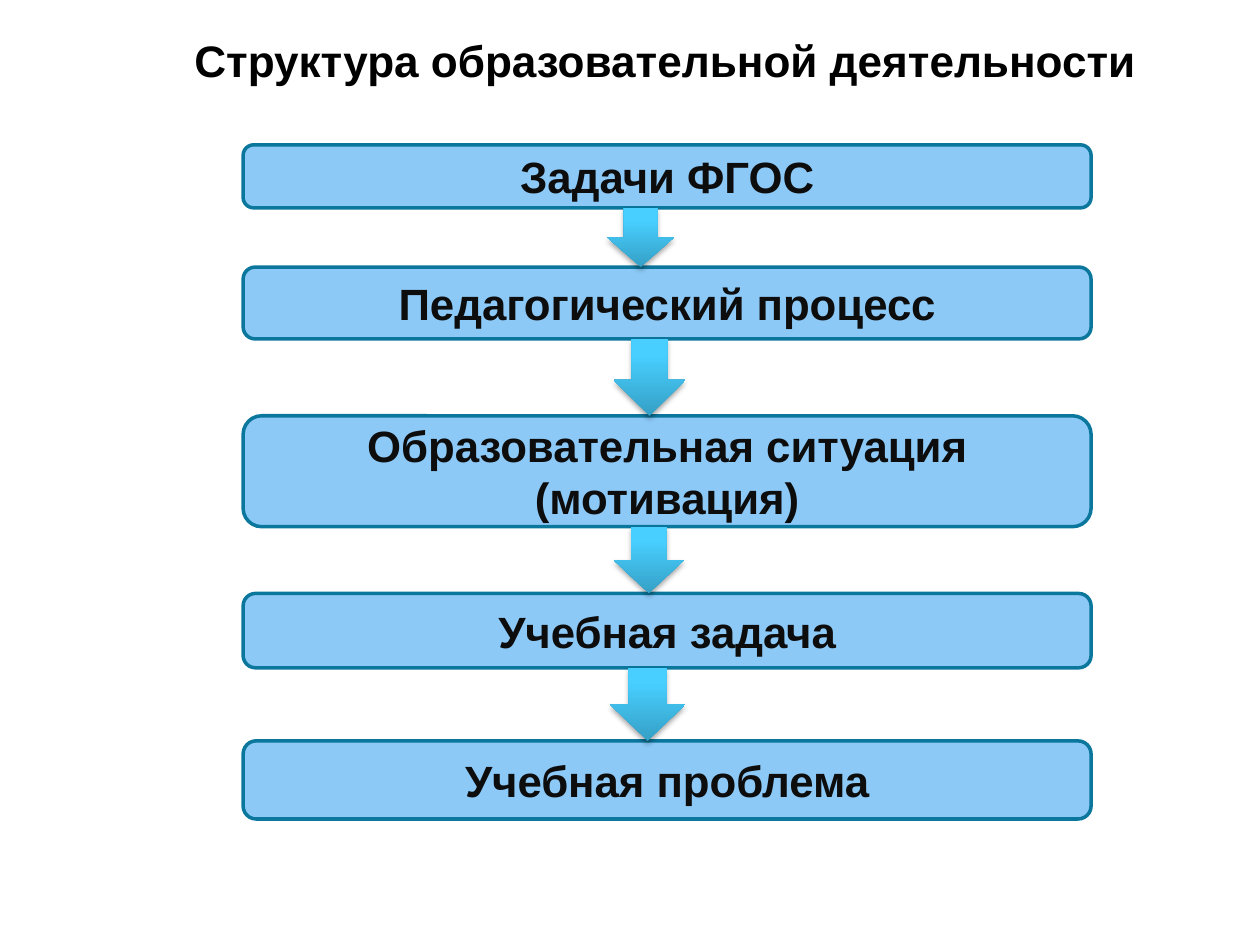
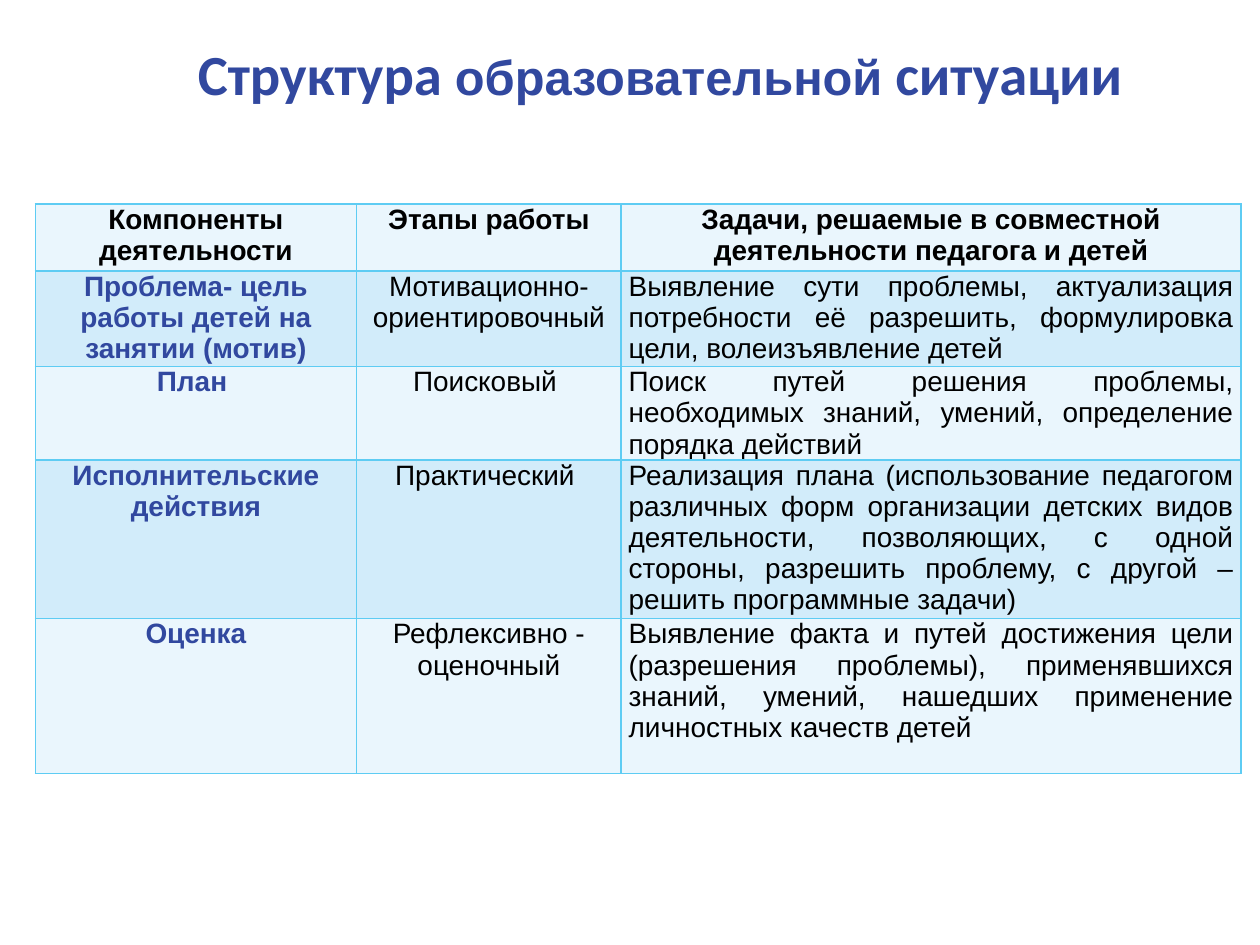
from itertools import pairwise

from lxml import etree
from pptx import Presentation
from pptx import util as u
from pptx.dml.color import RGBColor
from pptx.enum import shapes, text
from pptx.oxml import parse_xml
from pptx.oxml.ns import nsdecls, qn

COLUMNS, ROWS = 100, 75
CELL = u.Inches(0.1)
BLACK, INK, NAVY = "000000", "0D0D0D", "31489F"
STEP_FILL, STEP_LINE = "8CC9F7", "0C779D"
ARROW_DARK, ARROW_LIGHT = "35A0C6", "48CFFF"
BORDER, BANDS = "5ECCF3", ("EAF6FD", "D2ECFA")
CENTER, JUSTIFY = text.PP_ALIGN.CENTER, text.PP_ALIGN.JUSTIFY

STEPS = [
    ("Задачи ФГОС", 0, 5),
    ("Педагогический процесс", 9.7, 5.7),
    ("Образовательная ситуация (мотивация)", 21.5, 8.8),
    ("Учебная задача", 35.6, 5.9),
    ("Учебная проблема", 47.3, 6.2),
]
ARROWS = [(28.9, 5.3), (29.4, 5.7), (29.4, 5.6), (29.1, 6)]

STAGES = [
    ("Компоненты деятельности", "Этапы работы",
     "Задачи, решаемые в совместной деятельности педагога и детей"),
    ("Проблема- цель работы детей на занятии (мотив)", "Мотивационно-ориентировочный",
     "Выявление сути проблемы, актуализация потребности её разрешить, "
     "формулировка цели, волеизъявление детей"),
    ("План ", "Поисковый ",
     "Поиск путей решения проблемы, необходимых знаний, умений, "
     "определение порядка действий"),
    ("Исполнительские действия", "Практический ",
     "Реализация плана (использование педагогом различных форм организации "
     "детских видов деятельности, позволяющих, с одной стороны, разрешить "
     "проблему, с другой – решить программные задачи)"),
    ("Оценка", "Рефлексивно - оценочный",
     "Выявление факта и путей достижения цели (разрешения проблемы), "
     "применявшихся знаний, умений, нашедших применение личностных качеств детей"),
]


def color(value):
    """Turn a hex string into a colour."""
    return RGBColor.from_string(value)


def grid(*cells):
    """Turn counts of grid cells into lengths."""
    return [u.Emu(round(count * CELL)) for count in cells]


def write(para, words, size, ink=BLACK, font="Arial", bold=True, align=CENTER):
    """Add one formatted span to a paragraph."""
    para.alignment = align
    span = para.add_run()
    span.text = words
    span.font.size = u.Pt(size)
    span.font.name = font
    span.font.bold = bold
    span.font.color.rgb = color(ink)


def add_page(deck, box, spans, ink):
    """Add a page whose title holds the given (words, size, font) spans."""
    page = deck.slides.add_slide(deck.slide_layouts.get_by_name("Title Only"))
    title = page.shapes.title
    title.left, title.top, title.width, title.height = grid(*box)
    title.text_frame.vertical_anchor = text.MSO_ANCHOR.MIDDLE
    for words, size, font in spans:
        write(title.text_frame.paragraphs[0], words, size, ink, font)
    return page


def add_step(group, box, words):
    """Draw one rounded step of the flow."""
    step = group.shapes.add_shape(shapes.MSO_SHAPE.ROUNDED_RECTANGLE, *grid(*box))
    step.shadow.inherit = False
    step.fill.solid()
    step.fill.fore_color.rgb = color(STEP_FILL)
    step.line.color.rgb = color(STEP_LINE)
    step.line.width = u.Pt(2)
    step.text_frame.word_wrap = True
    step.text_frame.vertical_anchor = text.MSO_ANCHOR.MIDDLE
    write(step.text_frame.paragraphs[0], words, 25, INK)


def add_arrow(group, box):
    """Draw one shaded arrow with a soft shadow below it."""
    arrow = group.shapes.add_shape(shapes.MSO_SHAPE.DOWN_ARROW, *grid(*box))
    arrow.fill.gradient()
    arrow.fill.gradient_angle = 90
    for stop, tint, position in zip(
            arrow.fill.gradient_stops, (ARROW_DARK, ARROW_LIGHT), (0, 0.8)):
        stop.color.rgb = color(tint)
        stop.position = position
    arrow.line.fill.background()
    arrow.element.spPr.append(parse_xml(
        f'<a:effectLst {nsdecls("a")}><a:outerShdw blurRad="{u.Pt(3.1)}" '
        f'dist="{u.Pt(1.8)}" dir="5400000" rotWithShape="0"><a:srgbClr val="{BLACK}">'
        '<a:alpha val="35000"/></a:srgbClr></a:outerShdw></a:effectLst>'))


def add_flow(page, left, top, width):
    """Stack the steps and fill each gap with an arrow."""
    group = page.shapes.add_group_shape()
    for words, offset, height in STEPS:
        add_step(group, (left, top + offset, width, height), words)
    for (upper, lower), (shift, breadth) in zip(pairwise(STEPS), ARROWS):
        end = upper[1] + upper[2]
        add_arrow(group, (left + shift, top + end, breadth, lower[1] - end))


def add_borders(cell):
    """Outline a table cell on its four sides."""
    properties = cell._tc.get_or_add_tcPr()
    for side in ("lnL", "lnR", "lnT", "lnB"):
        line = etree.SubElement(properties, qn(f"a:{side}"), w=str(u.Pt(1)))
        fill = etree.SubElement(line, qn("a:solidFill"))
        etree.SubElement(fill, qn("a:srgbClr"), val=BORDER)


def fill_cell(cell, words, row, column):
    """Format one cell according to its row and column."""
    add_borders(cell)
    cell.fill.solid()
    cell.fill.fore_color.rgb = color(BANDS[row % 2])
    cell.margin_left = cell.margin_right = u.Inches(0.06)
    cell.margin_top = cell.margin_bottom = 0
    header, component = row == 0, column == 0
    write(cell.text_frame.paragraphs[0], words, 16,
          ink=NAVY if component and not header else BLACK,
          bold=header or component,
          align=JUSTIFY if column == 2 and not header else CENTER)


def add_stages(page, left, top, widths, heights):
    """Build the table of stages from its column widths and row heights."""
    box = grid(left, top, sum(widths), sum(heights))
    table = page.shapes.add_table(len(heights), len(widths), *box).table
    for column, width in zip(table.columns, grid(*widths)):
        column.width = width
    for row, height in zip(table.rows, grid(*heights)):
        row.height = height
    for row, stage in enumerate(STAGES):
        for column, words in enumerate(stage):
            fill_cell(table.cell(row, column), words, row, column)


def main():
    """Build and save the deck."""
    deck = Presentation()
    deck.slide_width, deck.slide_height = grid(COLUMNS, ROWS)

    page = add_page(deck, (7.5, 2, 90.6, 5.5),
                    [("Структура образовательной деятельности", 25.2, "Arial")], BLACK)
    add_flow(page, 19.3, 11.5, 67.3)

    page = add_page(deck, (13, 3.6, 78.8, 4.4),
                    [("Структура ", 32.4, "Calibri"),
                     ("образовательной", 27.9, "Arial"),
                     (" ситуации", 32.4, "Calibri")], NAVY)
    add_stages(page, 2.8, 16.2, (25.5, 21, 49.2), (5.3, 7.6, 5.6, 12.6, 12.3))

    deck.save("out.pptx")


if __name__ == "__main__":
    main()
